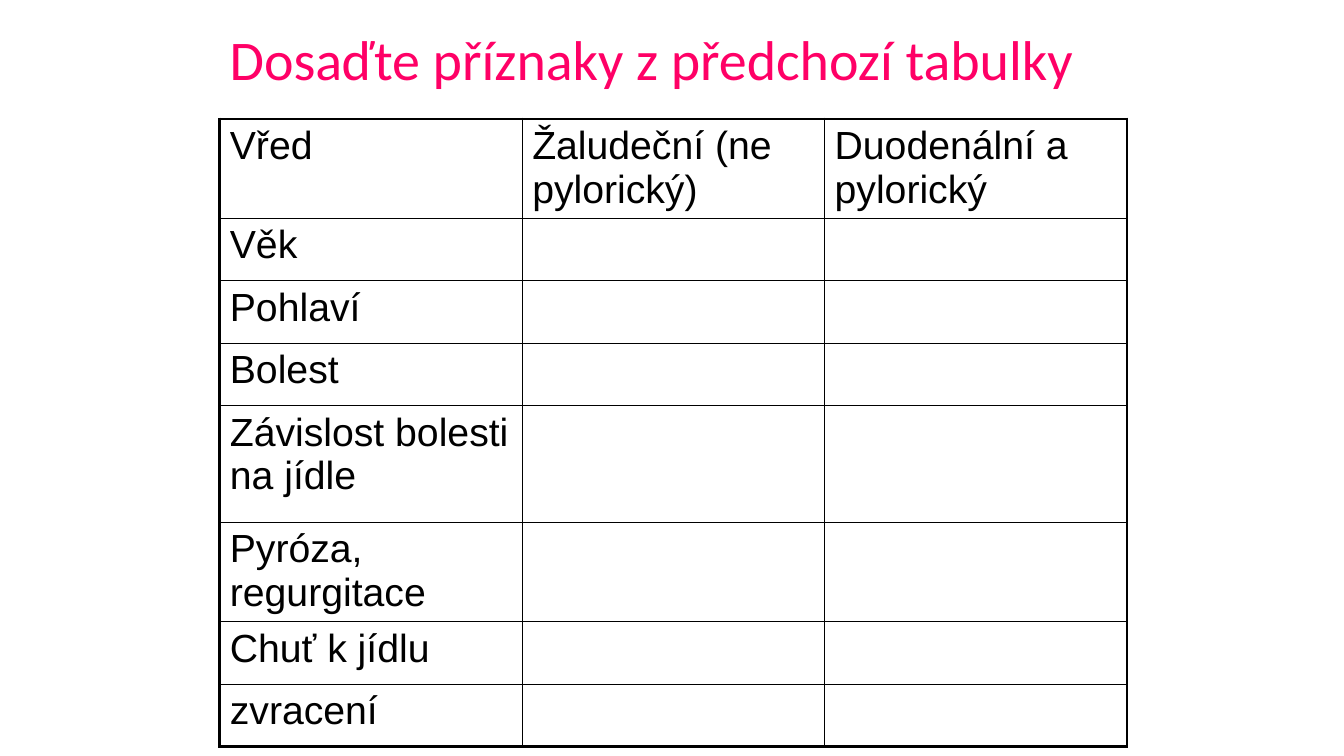
"""Build a slide with a worksheet table comparing ulcer symptoms."""
from dataclasses import dataclass

import lxml.etree
import pptx
import pptx.dml.color
import pptx.enum.text
import pptx.oxml.ns
import pptx.util

Pt = pptx.util.Pt
qn = pptx.oxml.ns.qn
BLACK = "000000"
THIN, THICK = 1, 2.25
LEFT, WIDTH = 157, 648
PLAIN_STYLE = "{2D5ABB26-0587-4C30-8999-92F81FD0307C}"


@dataclass
class Row:
    height: float
    texts: tuple[str, ...]


ROWS = [
    Row(69.5, ("Vřed", "Žaludeční (ne pylorický)", "Duodenální a pylorický")),
    Row(44.64, ("Věk", "", "")),
    Row(44.64, ("Pohlaví", "", "")),
    Row(44.64, ("Bolest", "", "")),
    Row(83.5, ("Závislost bolesti na jídle", "", "")),
    Row(69.5, ("Pyróza, regurgitace", "", "")),
    Row(44.64, ("Chuť k jídlu", "", "")),
    Row(44.64, ("zvracení", "", "")),
]


def color(value: str) -> pptx.dml.color.RGBColor:
    """Turn a hex string into a colour."""
    return pptx.dml.color.RGBColor.from_string(value)


def add_run(p, text: str, font: str, size: float, fill: str) -> None:
    """Add one formatted run to a paragraph."""
    r = p.add_run()
    r.text = text
    r.font.name = font
    r.font.size = Pt(size)
    r.font.color.rgb = color(fill)


def add_border(cell, side: str, width: float) -> None:
    """Draw one solid black border of a cell."""
    tc_pr = cell._tc.get_or_add_tcPr()
    ln = lxml.etree.SubElement(tc_pr, qn(f"a:ln{side}"), w=str(Pt(width)))
    fill = lxml.etree.SubElement(ln, qn("a:solidFill"))
    lxml.etree.SubElement(fill, qn("a:srgbClr"), val=BLACK)


def add_title(s, text: str) -> None:
    """Add the slide title."""
    sp = s.shapes.add_textbox(Pt(LEFT), Pt(0), Pt(WIDTH), Pt(89))
    tf = sp.text_frame
    tf.word_wrap = True
    tf.vertical_anchor = pptx.enum.text.MSO_ANCHOR.MIDDLE
    p = tf.paragraphs[0]
    p.line_spacing = 0.9
    add_run(p, text, "Calibri", 40, "FF0066")


def add_symptom_table(s, rows: list[Row]) -> None:
    """Add the table with a thick outline and thin inner lines."""
    n_rows, n_cols = len(rows), len(rows[0].texts)
    height = sum(row.height for row in rows)
    table = s.shapes.add_table(
        n_rows, n_cols, Pt(LEFT), Pt(85), Pt(WIDTH), Pt(height)
    ).table
    table.first_row = table.horz_banding = False
    table._tbl.tblPr.find(qn("a:tableStyleId")).text = PLAIN_STYLE
    for i, row in enumerate(rows):
        table.rows[i].height = Pt(row.height)
        for j, text in enumerate(row.texts):
            cell = table.cell(i, j)
            cell.margin_bottom = Pt(0)
            outer = {"L": j == 0, "R": j == n_cols - 1,
                     "T": i == 0, "B": i == n_rows - 1}
            for side, is_outer in outer.items():
                add_border(cell, side, THICK if is_outer else THIN)
            cell.fill.background()
            if text:
                add_run(cell.text_frame.paragraphs[0], text, "Arial", 28, BLACK)


def main() -> None:
    """Create and save the presentation."""
    prs = pptx.Presentation()
    prs.slide_width, prs.slide_height = Pt(960), Pt(540)
    s = prs.slides.add_slide(prs.slide_layouts[6])
    add_title(s, "Dosaďte příznaky z předchozí tabulky")
    add_symptom_table(s, ROWS)
    prs.save("out.pptx")


if __name__ == "__main__":
    main()
